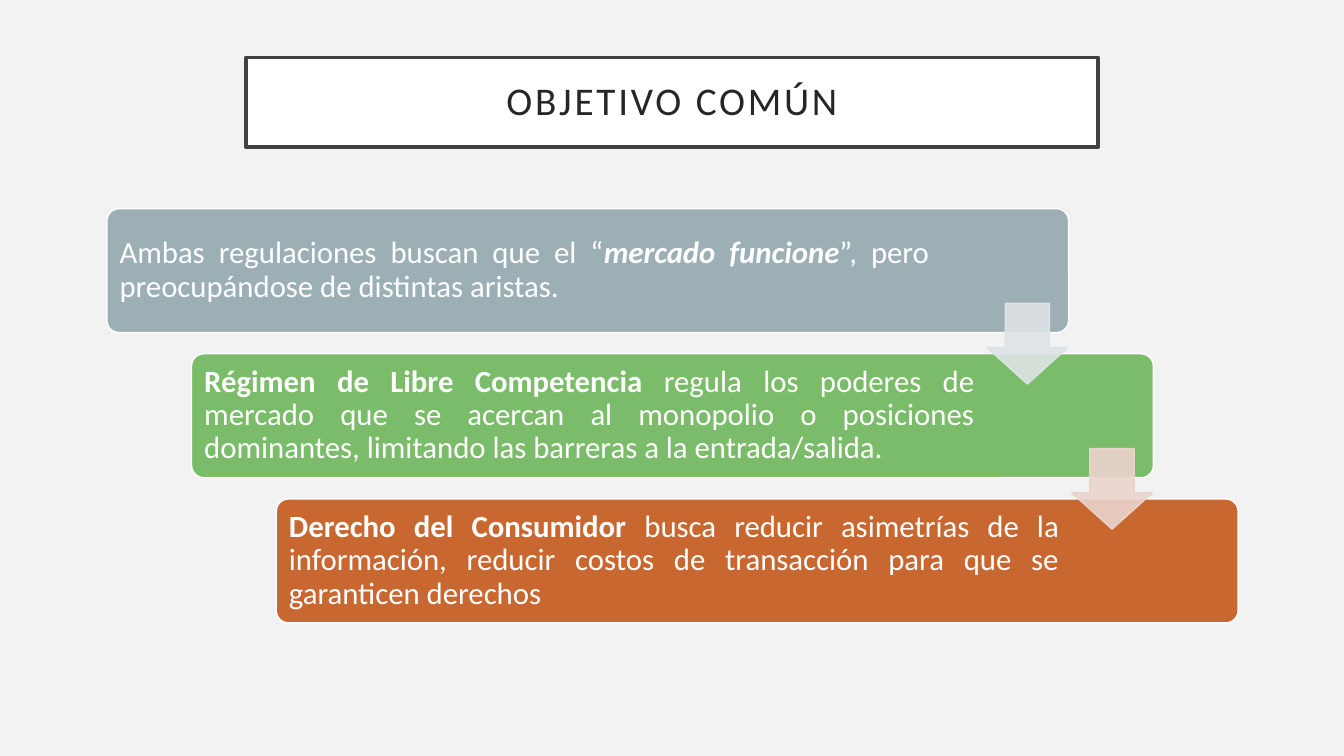
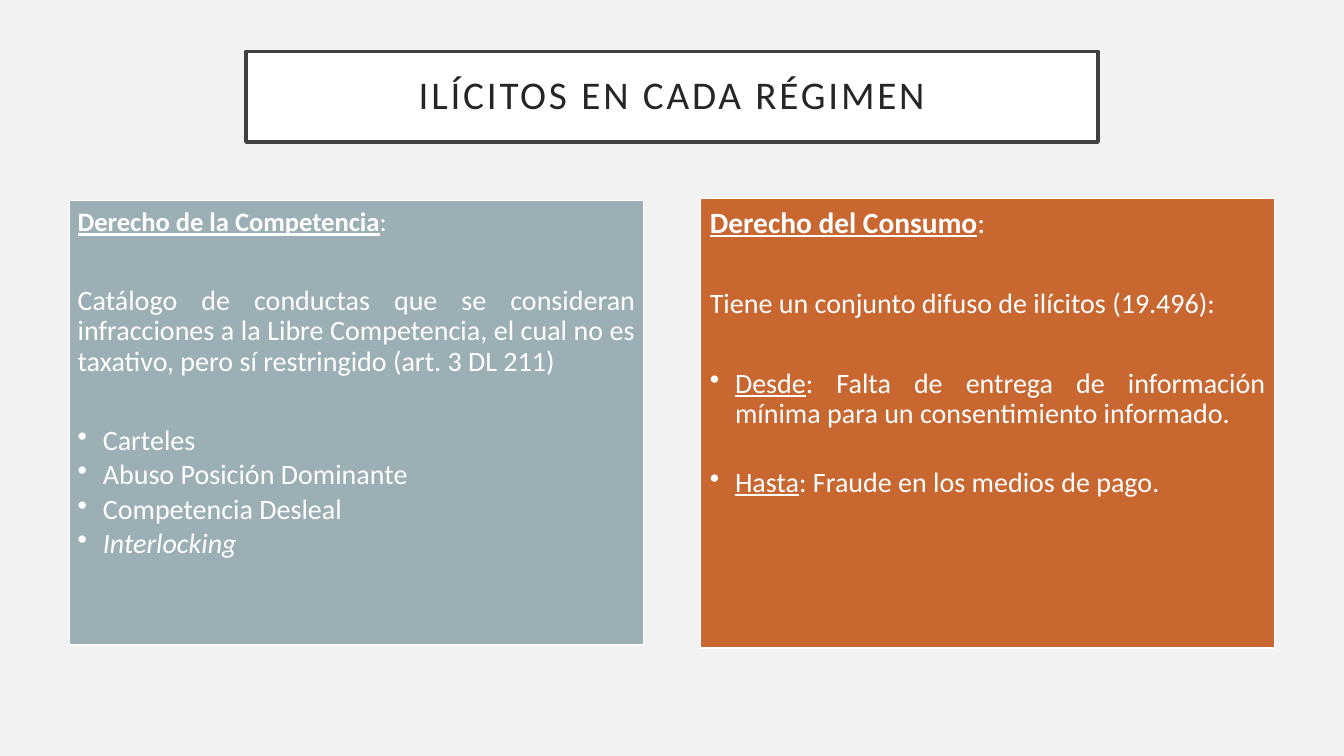
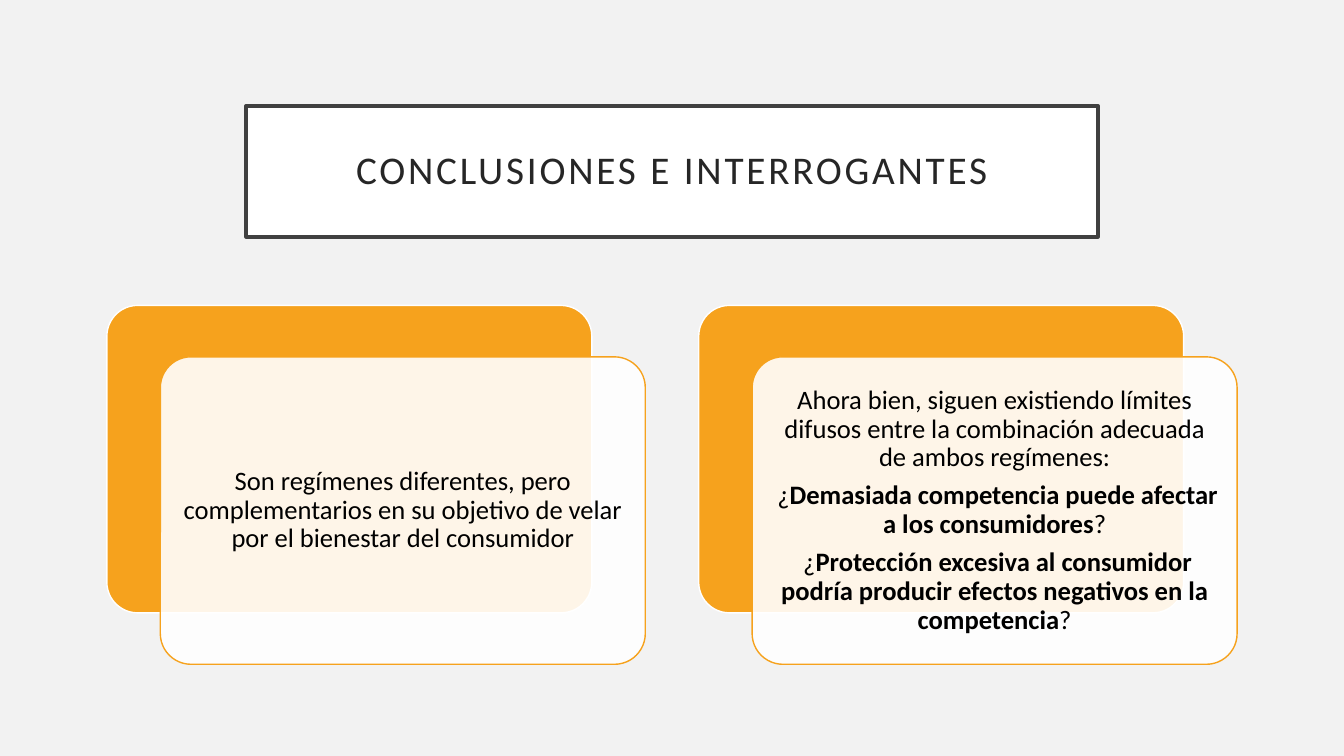
from lxml import etree
from pptx import Presentation
from pptx.dml.color import RGBColor
from pptx.enum import shapes, text
from pptx.oxml.ns import qn
from pptx.util import Inches, Pt

PAPER = RGBColor(0xF2, 0xF2, 0xF2)
WHITE = RGBColor(0xFF, 0xFF, 0xFF)
BLACK = RGBColor(0x00, 0x00, 0x00)
INK = RGBColor(0x26, 0x26, 0x26)
FRAME = RGBColor(0x40, 0x40, 0x40)
SLATE = RGBColor(0x9B, 0xAF, 0xB5)
GREEN = RGBColor(0x7A, 0xBC, 0x69)
RUST = RGBColor(0xC9, 0x67, 0x31)
AMBER = RGBColor(0xF6, 0xA2, 0x1D)
PALE_SLATE = RGBColor(0xDE, 0xE3, 0xE5)
PALE_RUST = RGBColor(0xEB, 0xD3, 0xCD)

RECT = shapes.MSO_SHAPE.RECTANGLE
ROUNDED = shapes.MSO_SHAPE.ROUNDED_RECTANGLE
ARROW = shapes.MSO_SHAPE.DOWN_ARROW
CENTER = text.PP_ALIGN.CENTER
JUSTIFY = text.PP_ALIGN.JUSTIFY
MIDDLE = text.MSO_ANCHOR.MIDDLE
TOP = text.MSO_ANCHOR.TOP


def add_box(slide, kind, at, fill, line, width=1, adjust=(), sheer=()):
    box = slide.shapes.add_shape(kind, *[Inches(n) for n in at])
    box.shadow.inherit = False
    box.fill.solid()
    box.fill.fore_color.rgb = fill
    box.line.color.rgb = line
    box.line.width = Pt(width)
    for i, value in enumerate(adjust):
        box.adjustments[i] = value
    properties = box.fill._xPr
    for part in sheer:
        color = properties.find(qn(part) + "/" + qn("a:srgbClr"))
        etree.SubElement(color, qn("a:alpha"), val="90000")
    return box


def write(box, paragraphs, color, align, insets, anchor=MIDDLE):
    frame = box.text_frame
    frame.word_wrap = True
    frame.vertical_anchor = anchor
    left, right, edge = insets
    frame.margin_left, frame.margin_right = Inches(left), Inches(right)
    frame.margin_top = frame.margin_bottom = Inches(edge)
    for i, (size, gap, bullet, runs) in enumerate(paragraphs):
        paragraph = frame.add_paragraph() if i else frame.paragraphs[0]
        if bullet:
            properties = paragraph._p.get_or_add_pPr()
            properties.set("marL", str(Inches(0.25)))
            properties.set("indent", str(Inches(-0.25)))
            etree.SubElement(properties, qn("a:buChar"), char="•")
        paragraph.alignment = align
        paragraph.line_spacing = 0.9
        paragraph.space_after = Pt(gap)
        paragraph.font.name = "Calibri"
        paragraph.font.size = Pt(size)
        paragraph.font.color.rgb = color
        for words, style in runs:
            run = paragraph.add_run()
            run.text = words
            if "b" in style:
                run.font.bold = True
            if "i" in style:
                run.font.italic = True
            if "u" in style:
                run.font.underline = True


prs = Presentation()
prs.slide_width, prs.slide_height = Inches(13.33), Inches(7.5)
backdrop = prs.slide_master.background.fill
backdrop.solid()
backdrop.fore_color.rgb = PAPER

slides = []
for title, top, height in [
    ("OBJETIVO COMÚN", 0.57, 0.89),
    ("ILÍCITOS EN CADA RÉGIMEN", 0.51, 0.9),
    ("CONCLUSIONES E INTERROGANTES", 1.05, 1.3),
]:
    slide = prs.slides.add_slide(prs.slide_layouts[6])
    banner = add_box(slide, RECT, (2.44, top, 8.45, height), WHITE, FRAME, 2.5)
    write(banner, [(28, 0, False, [(title, "")])], INK, CENTER, (0.2, 0.2, 0.2))
    banner.text_frame.paragraphs[0].runs[0].font._element.set("spc", "200")
    slides.append(slide)
objective, offences, conclusions = slides

steps = [
    (SLATE, 1.35, [
        ("Ambas regulaciones buscan que el “", ""),
        ("mercado funcione", "bi"),
        ("”, pero preocupándose de distintas aristas.", ""),
    ]),
    (GREEN, 1.74, [
        ("Régimen de Libre Competencia ", "b"),
        ("regula los poderes de mercado que se acercan al monopolio o posiciones "
         "dominantes, limitando las barreras a la entrada/salida.", ""),
    ]),
    (RUST, 1.74, [
        ("Derecho del Consumidor ", "b"),
        ("busca reducir asimetrías de la información, reducir costos de "
         "transacción para que se garanticen derechos", ""),
    ]),
]
STEP_LEFT, STEP_TOP, STEP_RIGHTWARD, STEP_DOWN = 1.06, 2.07, 0.84, 1.44
for i, (fill, right, runs) in enumerate(steps):
    at = (STEP_LEFT + i * STEP_RIGHTWARD, STEP_TOP + i * STEP_DOWN, 9.54, 1.23)
    step = add_box(objective, ROUNDED, at, fill, WHITE, adjust=(0.1,))
    write(step, [(22, 0, False, runs)], WHITE, JUSTIFY, (0.09, right, 0.09))
for i, tint in enumerate([PALE_SLATE, PALE_RUST]):
    at = (STEP_LEFT + 8.73 + i * STEP_RIGHTWARD, STEP_TOP + 0.94 + i * STEP_DOWN, 0.8, 0.8)
    add_box(objective, ARROW, at, tint, tint, adjust=(0.55, 0.45),
            sheer=("a:solidFill", "a:ln/" + "a:solidFill") [:1])

panels = [
    ((0.69, 1.99, 5.69, 4.41), SLATE, 0.08, [
        (19, 35, False, [("Derecho de la Competencia", "bu"), (":", "")]),
        (20, 35, False, [
            ("Catálogo de conductas que se consideran infracciones a la Libre "
             "Competencia, el cual no es taxativo, pero sí restringido "
             "(art. 3 DL 211)", ""),
        ]),
        (20, 3, True, [("Carteles", "")]),
        (20, 3, True, [("Abuso Posición Dominante", "")]),
        (20, 3, True, [("Competencia Desleal", "")]),
        (20, 3, True, [("Interlocking", "i")]),
    ]),
    ((6.95, 1.97, 5.69, 4.46), RUST, 0.09, [
        (21, 36, False, [("Derecho del Consumo", "bu"), (":", "")]),
        (20, 35, False, [("Tiene un conjunto difuso de ilícitos (19.496):", "")]),
        (20, 27.5, True, [
            ("Desde", "u"),
            (": Falta de entrega de información mínima para un "
             "consentimiento informado.", ""),
        ]),
        (20, 3, True, [("Hasta", "u"), (": Fraude en los medios de pago.", "")]),
    ]),
]
for at, fill, inset, paragraphs in panels:
    panel = add_box(offences, RECT, at, fill, WHITE)
    write(panel, paragraphs, WHITE, JUSTIFY, (inset, inset, inset), TOP)

cards = [
    [[("Son regímenes diferentes, pero complementarios en su objetivo de velar "
       "por el bienestar del consumidor", "")]],
    [
        [("Ahora bien, siguen existiendo límites difusos entre la combinación "
          "adecuada de ambos regímenes:", "")],
        [(" ¿", ""),
         ("Demasiada competencia puede afectar a los consumidores", "b"),
         ("?", "")],
        [(" ¿", ""),
         ("Protección excesiva al consumidor podría producir efectos negativos "
          "en la competencia", "b"),
         ("?", "")],
    ],
]
for i, card in enumerate(cards):
    left, top, width, height = 1.06 + i * 5.87, 3.03, 4.81, 3.05
    add_box(conclusions, ROUNDED, (left, top, width, height), AMBER, WHITE, adjust=(0.1,))
    front = add_box(conclusions, ROUNDED, (left + 0.53, top + 0.51, width, height),
                    WHITE, AMBER, adjust=(0.1,), sheer=("a:solidFill",))
    write(front, [(19, 6.65, False, runs) for runs in card], BLACK, CENTER,
          (0.08, 0.08, 0.08))

prs.save("out.pptx")
